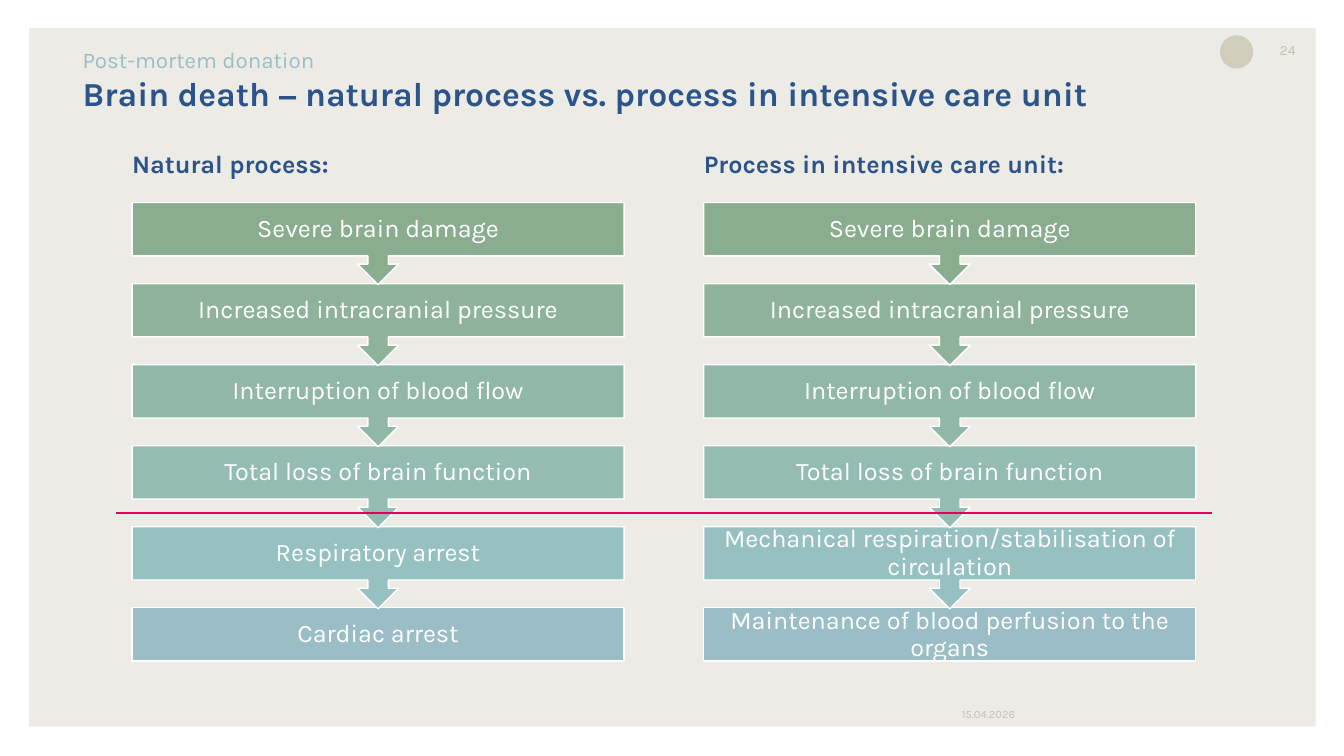
from dataclasses import dataclass

from lxml import etree
from pptx import Presentation
from pptx.dml.color import RGBColor
from pptx.enum.shapes import MSO_CONNECTOR, MSO_SHAPE
from pptx.enum.text import MSO_ANCHOR, MSO_AUTO_SIZE, PP_ALIGN
from pptx.oxml.ns import qn
from pptx.util import Inches, Pt

RECTANGLE = MSO_SHAPE.RECTANGLE
CALLOUT = MSO_SHAPE.DOWN_ARROW_CALLOUT
OVAL = MSO_SHAPE.OVAL
STRAIGHT = MSO_CONNECTOR.STRAIGHT
TOP, MIDDLE = MSO_ANCHOR.TOP, MSO_ANCHOR.MIDDLE
LEFT, CENTER, RIGHT = PP_ALIGN.LEFT, PP_ALIGN.CENTER, PP_ALIGN.RIGHT
NO_AUTOFIT = MSO_AUTO_SIZE.NONE


@dataclass(frozen=True)
class Theme:
    font: str = "Karla"
    panel: str = "EDEBE5"
    emblem: str = "D1CDBD"
    number: str = "C4BFAC"
    date: str = "BFBFBF"
    heading: str = "2A548A"
    kicker: str = "9BBDC5"
    white: str = "FFFFFF"
    divider: str = "E5005C"
    steps: tuple = ("8BAD8F", "8EB29A", "91B7A6", "94BCB2", "97C1C0", "9BBDC5")
    title_size: int = 24
    kicker_size: int = 16
    body_size: int = 18
    number_size: int = 10
    date_size: int = 8


@dataclass(frozen=True)
class Box:
    left: float
    top: float
    width: float
    height: float

    def emu(self):
        return [Inches(v) for v in (self.left, self.top, self.width, self.height)]


THEME = Theme()
SLIDE_WIDTH, SLIDE_HEIGHT = 13.33, 7.5
COLUMN_LEFTS = (1.31, 6.98)
COLUMN_TOP, COLUMN_WIDTH, COLUMN_HEIGHT = 1.47, 4.88, 5.09
HEADING_HEIGHT, CHAIN_OFFSET, STEP_HEIGHT = 0.3, 0.54, 0.53

SHARED_STEPS = [
    "Severe brain damage",
    "Increased intracranial pressure",
    "Interruption of blood flow",
    "Total loss of brain function",
]
PROCESSES = {
    "Natural process:": SHARED_STEPS + ["Respiratory arrest", "Cardiac arrest"],
    "Process in intensive care unit:": SHARED_STEPS + [
        "Mechanical respiration/stabilisation of circulation",
        "Maintenance of blood perfusion to the organs",
    ],
}


def write(holder, text, size, color, bold=False, align=LEFT, anchor=TOP, inset=0):
    frame = holder.text_frame
    frame.text = text
    frame.word_wrap = True
    frame.auto_size = NO_AUTOFIT
    frame.vertical_anchor = anchor
    frame.margin_left = frame.margin_right = Inches(inset)
    frame.margin_top = frame.margin_bottom = Inches(inset)
    paragraph = frame.paragraphs[0]
    paragraph.alignment = align
    for run in paragraph.runs:
        run.font.name = THEME.font
        run.font.size = Pt(size)
        run.font.bold = bold
        run.font.color.rgb = RGBColor.from_string(color)
    return paragraph


def label(slide, box, text, size, color, **style):
    return write(slide.shapes.add_textbox(*box.emu()), text, size, color, **style)


def block(slide, preset, box, fill, outline=None):
    shape = slide.shapes.add_shape(preset, *box.emu())
    shape.shadow.inherit = False
    shape.fill.solid()
    shape.fill.fore_color.rgb = RGBColor.from_string(fill)
    if outline:
        shape.line.color.rgb = RGBColor.from_string(outline)
        shape.line.width = Pt(1)
    else:
        shape.line.fill.background()
    return shape


def draw_frame(slide, box):
    block(slide, RECTANGLE, box, THEME.panel)
    right = box.left + box.width
    bottom = box.top + box.height
    block(slide, OVAL, Box(right - 0.95, box.top + 0.07, 0.33, 0.33), THEME.emblem)
    label(slide, Box(right - 0.6, box.top + 0.07, 0.4, 0.3), "24",
          THEME.number_size, THEME.number, align=RIGHT, anchor=MIDDLE)
    label(slide, Box(9.54, bottom - 0.23, 1, 0.2), "15.04.2026",
          THEME.date_size, THEME.date, anchor=MIDDLE)


def draw_header(slide, box):
    label(slide, Box(box.left, box.top, box.width, 0.25), "Post-mortem donation",
          THEME.kicker_size, THEME.kicker)
    title = slide.shapes.title
    title_box = Box(box.left, box.top + 0.26, box.width, box.height - 0.26)
    title.left, title.top, title.width, title.height = title_box.emu()
    write(title, "Brain death − natural process vs. process in intensive care unit",
          THEME.title_size, THEME.heading, bold=True)


def draw_process(slide, box, heading, steps):
    label(slide, Box(box.left, box.top, box.width, HEADING_HEIGHT), heading,
          THEME.body_size, THEME.heading, bold=True)
    last = len(steps) - 1
    pitch = (box.height - CHAIN_OFFSET - STEP_HEIGHT) / last
    for row in range(last, -1, -1):
        preset, height = (RECTANGLE, STEP_HEIGHT) if row == last else (CALLOUT, pitch + 0.01)
        top = box.top + CHAIN_OFFSET + row * pitch
        step = block(slide, preset, Box(box.left, top, box.width, height),
                     THEME.steps[row], THEME.white)
        paragraph = write(step, steps[row], THEME.body_size, THEME.white,
                          align=CENTER, anchor=MIDDLE, inset=0.14)
        paragraph.line_spacing = 0.9


def draw_divider(slide, left, right, y):
    divider = slide.shapes.add_connector(
        STRAIGHT, Inches(left), Inches(y), Inches(right), Inches(y))
    divider.line.color.rgb = RGBColor.from_string(THEME.divider)
    divider.line.width = Pt(1.5)
    etree.SubElement(divider.element.spPr, qn("a:effectLst"))


def main():
    deck = Presentation()
    deck.slide_width, deck.slide_height = Inches(SLIDE_WIDTH), Inches(SLIDE_HEIGHT)
    slide = deck.slides.add_slide(deck.slide_layouts[5])
    title = slide.shapes.title.element
    draw_frame(slide, Box(0.29, 0.28, 12.76, 6.93))
    slide.shapes.element.append(title)
    draw_header(slide, Box(0.82, 0.46, 11.7, 0.7))
    for left, (heading, steps) in zip(COLUMN_LEFTS, PROCESSES.items()):
        draw_process(slide, Box(left, COLUMN_TOP, COLUMN_WIDTH, COLUMN_HEIGHT),
                     heading, steps)
    draw_divider(slide, 1.15, 12.02, 5.09)
    deck.save("out.pptx")


if __name__ == "__main__":
    main()
